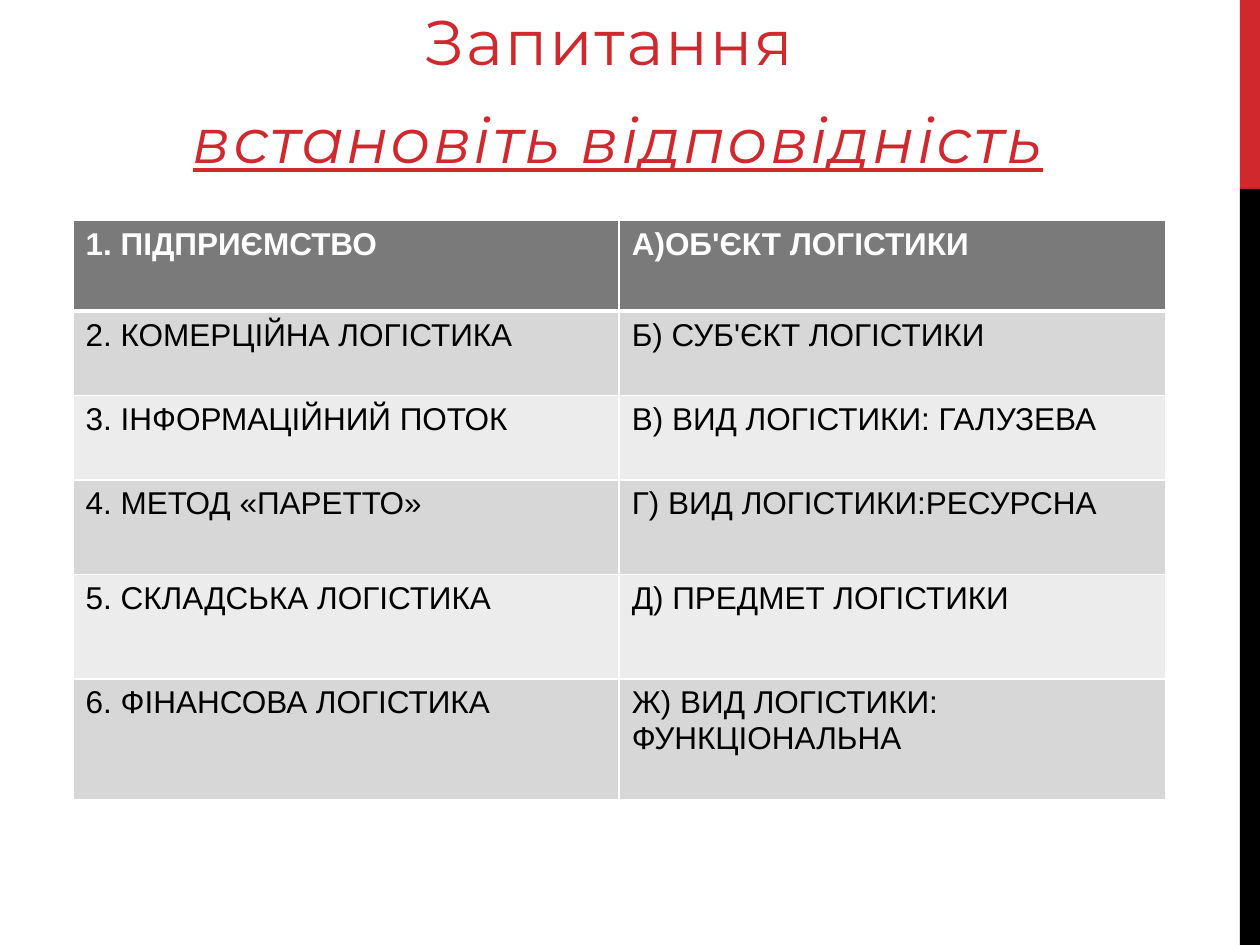
from lxml import etree
from pptx import Presentation
from pptx.dml.color import RGBColor
from pptx.enum.shapes import MSO_SHAPE
from pptx.enum.text import MSO_ANCHOR, MSO_AUTO_SIZE, PP_ALIGN
from pptx.oxml.ns import qn
from pptx.util import Inches, Pt

RECT = MSO_SHAPE.RECTANGLE
BOTTOM = MSO_ANCHOR.BOTTOM
CENTER = PP_ALIGN.CENTER
NO_FIT = MSO_AUTO_SIZE.NONE

COLORS = {
    "red": "D1282E",
    "black": "000000",
    "white": "FFFFFF",
    "head": "7A7A7A",
    "dark": "D7D7D7",
    "light": "ECECEC",
}
ROWS = [
    ("1. ПІДПРИЄМСТВО", "А)ОБ'ЄКТ ЛОГІСТИКИ", 0.72),
    ("2. КОМЕРЦІЙНА ЛОГІСТИКА", "Б) СУБ'ЄКТ ЛОГІСТИКИ", 0.67),
    ("3. ІНФОРМАЦІЙНИЙ ПОТОК", "В) ВИД ЛОГІСТИКИ: ГАЛУЗЕВА", 0.67),
    ("4. МЕТОД «ПАРЕТТО»", "Г) ВИД ЛОГІСТИКИ:РЕСУРСНА", 0.75),
    ("5. СКЛАДСЬКА ЛОГІСТИКА", "Д) ПРЕДМЕТ ЛОГІСТИКИ", 0.83),
    ("6. ФІНАНСОВА ЛОГІСТИКА", "Ж) ВИД ЛОГІСТИКИ: ФУНКЦІОНАЛЬНА", 0.96),
]


def rgb(name):
    return RGBColor.from_string(COLORS[name])


def write(para, text, size=18, font="Arial", color="black", bold=False,
          slant=False, under=False, space=0):
    run = para.add_run()
    run.text = text
    face = run.font
    face.size, face.name = Pt(size), font
    face.bold, face.italic, face.underline = bold, slant, under
    face.color.rgb = rgb(color)
    if space:
        run._r.get_or_add_rPr().set("spc", str(round(space * 100)))


def add_bar(slide, top, height, color):
    bar = slide.shapes.add_shape(
        RECT, Inches(9.84), Inches(top), Inches(0.16), Inches(height))
    bar.shadow.inherit = False
    bar.fill.solid()
    bar.fill.fore_color.rgb = rgb(color)
    bar.line.fill.background()


def set_title(slide):
    title = slide.shapes.title
    title.left, title.top = Inches(0.58), Inches(0)
    title.width, title.height = Inches(8.5), Inches(1.4)
    frame = title.text_frame
    frame.auto_size = NO_FIT
    frame.word_wrap = True
    frame.vertical_anchor = BOTTOM
    frame.margin_top = frame.margin_bottom = 0
    look = {"size": 36, "font": "Montserrat", "color": "red", "space": 1.2}
    first, second = frame.paragraphs[0], frame.add_paragraph()
    first.alignment = second.alignment = CENTER
    first.space_before = Pt(0)
    second.space_before = Pt(13.2)
    write(first, "Запитання", **look)
    write(second, " ", **look)
    write(second, "встановіть відповідність", slant=True, under=True, **look)


def add_edge(props, side, width):
    line = etree.Element(qn(f"a:ln{side}"), w=str(Pt(width)))
    fill = etree.SubElement(line, qn("a:solidFill"))
    etree.SubElement(fill, qn("a:srgbClr"), val=COLORS["white"])
    return line


def set_cell(cell, text, row):
    head = row == 0
    write(cell.text_frame.paragraphs[0], text, bold=head,
          color="white" if head else "black")
    cell.fill.solid()
    shade = "head" if head else ("dark" if row % 2 else "light")
    cell.fill.fore_color.rgb = rgb(shade)
    props = cell._tc.get_or_add_tcPr()
    edges = {"L": 1, "R": 1, "T": 3 if row == 1 else 1, "B": 3 if head else 1}
    for spot, (side, width) in enumerate(edges.items()):
        props.insert(spot, add_edge(props, side, width))


def add_grid(slide):
    tall = sum(row[2] for row in ROWS)
    grid = slide.shapes.add_table(
        len(ROWS), 2, Inches(0.58), Inches(1.75),
        Inches(8.67), Inches(tall)).table
    grid.horz_banding = False
    for row, (left, right, height) in enumerate(ROWS):
        grid.rows[row].height = Inches(height)
        for col, text in enumerate((left, right)):
            set_cell(grid.cell(row, col), text, row)


def main():
    deck = Presentation()
    deck.slide_width, deck.slide_height = Inches(10), Inches(7.5)
    slide = deck.slides.add_slide(deck.slide_layouts[5])
    add_bar(slide, 0, 1.5, "red")
    add_bar(slide, 1.5, 6, "black")
    set_title(slide)
    add_grid(slide)
    deck.save("out.pptx")


if __name__ == "__main__":
    main()
